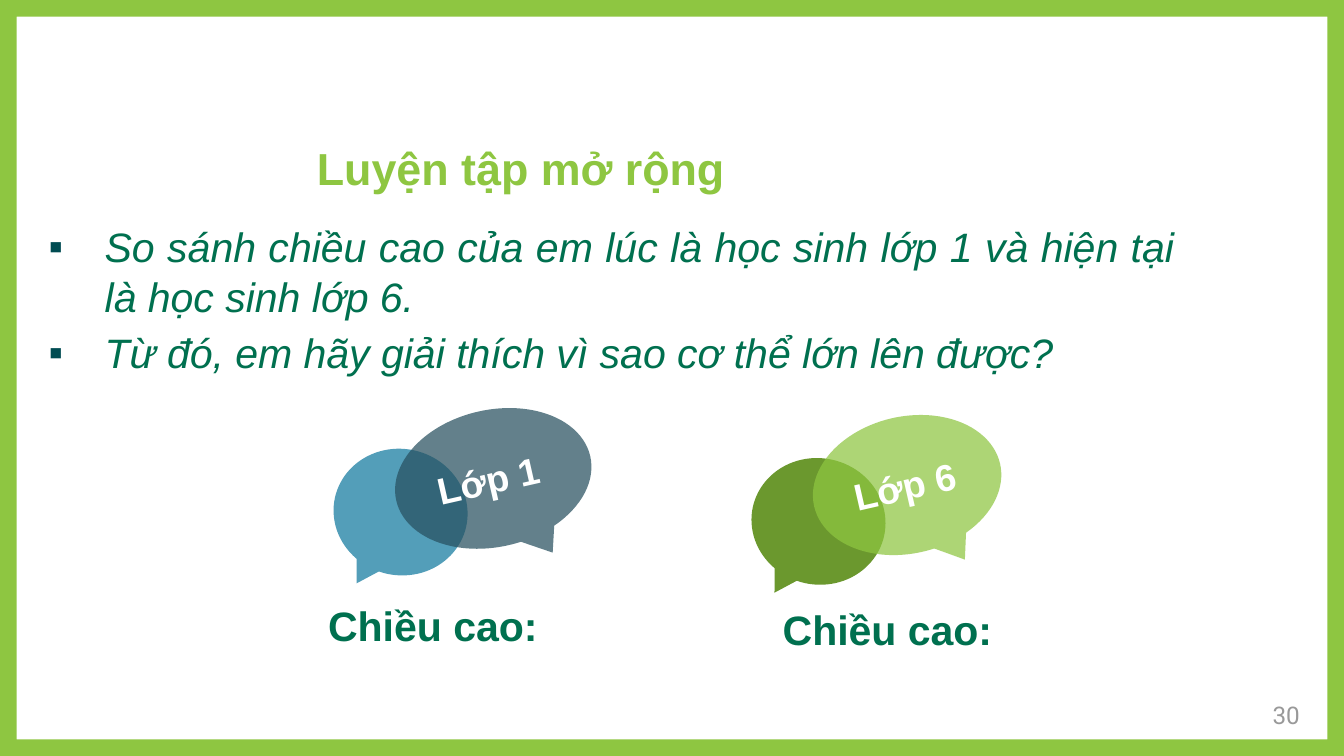
from lxml.etree import SubElement
from pptx import Presentation
from pptx.dml.color import RGBColor
from pptx.enum.shapes import MSO_SHAPE
from pptx.enum.text import MSO_ANCHOR, PP_ALIGN
from pptx.oxml.ns import qn
from pptx.util import Pt

LIME, GREEN, WHITE, GRAY = "8EC641", "00704F", "FFFFFF", "999999"


def rgb(color):
    return RGBColor.from_string(color)


def write(sp, lines, size, color, align=PP_ALIGN.LEFT, anchor=MSO_ANCHOR.TOP,
          bold=False, italic=False, font="Arial"):
    """Fill a shape with one paragraph per line and return its paragraphs."""
    tf = sp.text_frame
    tf.word_wrap = True
    tf.vertical_anchor = anchor
    tf.margin_left = tf.margin_right = tf.margin_top = tf.margin_bottom = Pt(7.2)
    for i, line in enumerate(lines):
        p = tf.add_paragraph() if i else tf.paragraphs[0]
        p.alignment = align
        r = p.add_run()
        r.text = line
        r.font.name, r.font.size = font, Pt(size)
        r.font.bold, r.font.italic = bold, italic
        r.font.color.rgb = rgb(color)
    return tf.paragraphs


prs = Presentation()
prs.slide_width, prs.slide_height = Pt(720), Pt(405)
s = prs.slides.add_slide(prs.slide_layouts[6])
shapes = s.shapes

# Border
frame = shapes.add_shape(MSO_SHAPE.FRAME, 0, 0, prs.slide_width, prs.slide_height)
frame.adjustments[0] = 0.022
frame.shadow.inherit = False
frame.fill.solid()
frame.fill.fore_color.rgb = rgb(LIME)
frame.line.fill.background()

# Title and page number
title = shapes.add_textbox(Pt(162.7), Pt(54.7), Pt(484.6), Pt(56.9))
write(title, ["Luyện tập mở rộng"], 24, LIME, anchor=MSO_ANCHOR.BOTTOM, bold=True)
number = shapes.add_textbox(Pt(667.4), Pt(367.9), Pt(36), Pt(31))
write(number, ["30"], 13, GRAY, PP_ALIGN.RIGHT, font="Roboto")

# Questions
questions = [
    "So sánh chiều cao của em lúc là học sinh lớp 1 và hiện tại là học sinh lớp 6.",
    "Từ đó, em hãy giải thích vì sao cơ thể lớn lên được?",
]
body = shapes.add_textbox(Pt(13), Pt(111.6), Pt(623.5), Pt(116.6))
for i, p in enumerate(write(body, questions, 22, GREEN, PP_ALIGN.JUSTIFY, italic=True)):
    p.line_spacing = Pt(26.4)
    p.space_before = Pt(2 if i else 0)
    p.space_after = Pt(2)
    pPr = p._p.get_or_add_pPr()
    pPr.set("marL", str(Pt(36)))
    pPr.set("indent", str(-Pt(30)))
    SubElement(SubElement(pPr, qn("a:buClr")), qn("a:srgbClr"), val="004C52")
    SubElement(pPr, qn("a:buFont"), typeface="Arial")
    SubElement(pPr, qn("a:buChar"), char="▪")

# Height labels
for left, top, width, height in [(124.6, 314.6, 214.6, 123.8), (365, 316.8, 221, 112.3)]:
    label = shapes.add_textbox(Pt(left), Pt(top), Pt(width), Pt(height))
    write(label, ["Chiều cao:"], 22, GREEN, PP_ALIGN.CENTER, bold=True)

# Speech bubbles: a small one behind a mirrored, translucent one for each grade
bubbles = [
    (178.6, 240.5, 72, 67.7, "539EB9", None),
    (211, 219.6, 106.6, 73.4, "27505F", "Lớp 1"),
    (402.5, 245.5, 72, 67.7, "6B982E", None),
    (434.9, 223.2, 102.2, 73.4, LIME, "Lớp 6"),
]
for left, top, width, height, color, grade in bubbles:
    sp = shapes.add_shape(MSO_SHAPE.OVAL_CALLOUT, Pt(left), Pt(top), Pt(width), Pt(height))
    sp.adjustments[0], sp.adjustments[1] = -0.208, 0.625
    sp.rotation = 347.1 if grade else 12.2
    sp.shadow.inherit = False
    sp.fill.solid()
    sp.fill.fore_color.rgb = rgb(color)
    sp.line.fill.background()
    if grade:
        sp._element.spPr.find(qn("a:xfrm")).set("flipH", "1")
        clr = sp._element.spPr.find(qn("a:solidFill")).find(qn("a:srgbClr"))
        SubElement(clr, qn("a:alpha"), val="72000")
        write(sp, [grade], 20, WHITE, anchor=MSO_ANCHOR.MIDDLE, bold=True)

prs.save("out.pptx")
